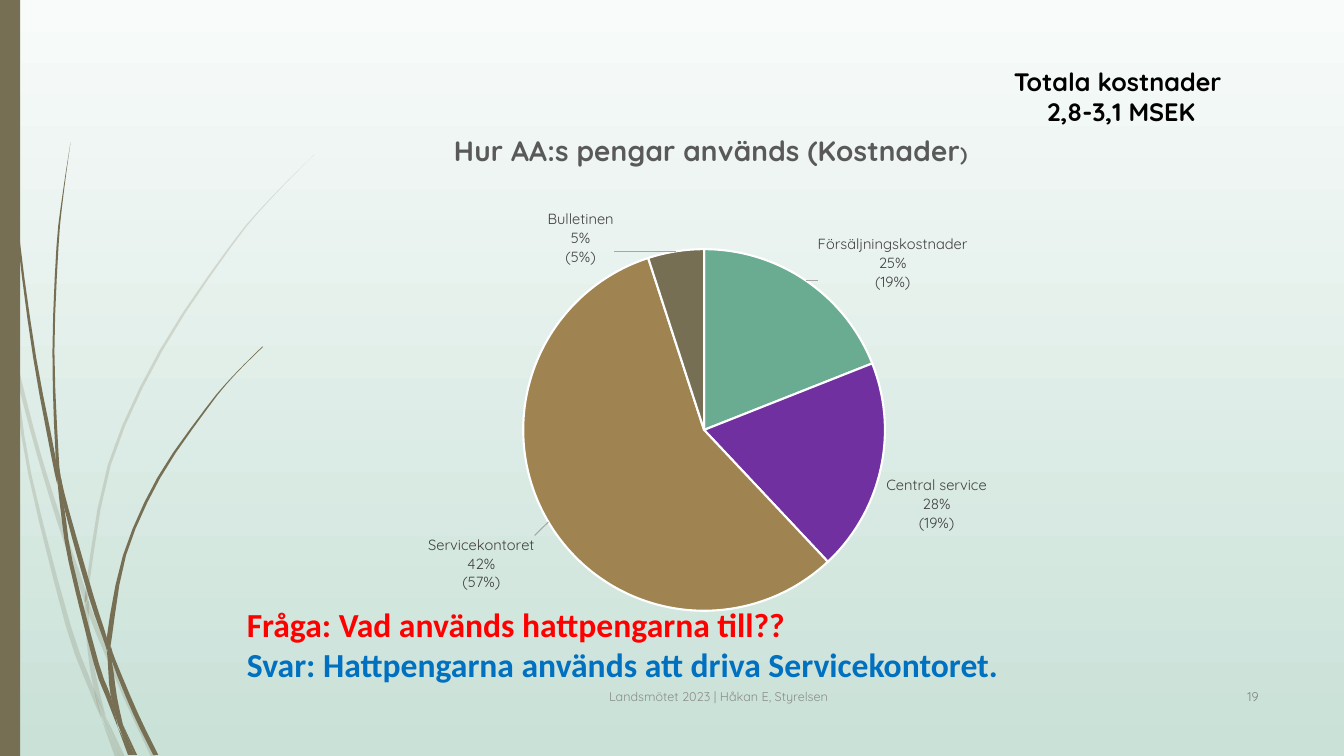
import pptx
import pptx.chart.data
import pptx.dml.color
import pptx.enum.chart
import pptx.enum.shapes
import pptx.enum.text
import pptx.oxml
import pptx.oxml.ns
import pptx.util
from pptx.util import Inches

RGBColor = pptx.dml.color.RGBColor
PP_ALIGN = pptx.enum.text.PP_ALIGN
MSO_ANCHOR = pptx.enum.text.MSO_ANCHOR

OLIVE = RGBColor(0x76, 0x6F, 0x54)
GREEN = RGBColor(0x6A, 0xAC, 0x91)
PURPLE = RGBColor(0x70, 0x30, 0xA0)
BROWN = RGBColor(0x9F, 0x83, 0x51)
WHITE = RGBColor(0xFF, 0xFF, 0xFF)
BLACK = RGBColor(0, 0, 0)
RED = RGBColor(0xFF, 0, 0)
BLUE = RGBColor(0, 0x70, 0xC0)
TITLE_GREY = RGBColor(0x59, 0x59, 0x59)
LABEL_GREY = RGBColor(0x40, 0x40, 0x40)
NUMBER_GREY = RGBColor(0x80, 0x80, 0x80)
FOOTER_GREY = RGBColor(0x8C, 0x8C, 0x8C)
SKY = RGBColor(0xF8, 0xFB, 0xFA)
MINT = RGBColor(0xC9, 0xE1, 0xD7)

# Each piece of grass: rows of (y, left x, right x), from top to bottom
PALE_GRASS = [
    [(2.82, 0, 0), (2.99, 0, 0.04), (3.22, 0.05, 0.09), (3.5, 0.11, 0.11)],
    [(3.45, 0.14, 0.14), (3.76, 0.17, 0.21), (4.49, 0.36, 0.4), (5.22, 0.58, 0.63),
     (5.86, 0.8, 0.85), (5.99, 0.84, 0.84)],
    [(5.96, 0.88, 0.88), (6.1, 0.88, 0.93), (6.93, 1.23, 1.27), (7.51, 1.5, 1.55)],
    [(7.11, 1.05, 1.05), (7.51, 1.19, 1.24)],
    [(3.5, 0.11, 0.11), (3.76, 0.14, 0.17), (4.7, 0.28, 0.31), (6.2, 0.65, 0.7),
     (6.83, 0.88, 0.93), (7.14, 1.01, 1.01)],
    [(5.99, 0.84, 0.84), (6.1, 0.84, 0.88), (6.46, 0.87, 0.91), (6.83, 0.93, 0.98),
     (7.11, 1.05, 1.05)],
    [(1.53, 3.12, 3.12), (1.97, 2.68, 2.69), (2.44, 2.28, 2.3), (3.48, 1.58, 1.61),
     (4.61, 1.07, 1.1), (5.84, 0.85, 0.88), (5.96, 0.88, 0.88)],
    [(7.14, 1.01, 1.01), (7.51, 1.14, 1.19)],
    [(5.86, 0.85, 0.85), (5.97, 0.84, 0.88), (6.1, 0.88, 0.88)],
    [(6.83, 0.93, 0.93), (7.07, 0.99, 1.03), (7.51, 1.19, 1.19)],
]
SOLID_GRASS = [
    [(0, 0.03, 0.04), (1.1, 0.07, 0.08), (2.33, 0.17, 0.19), (3.55, 0.33, 0.36),
     (4.53, 0.51, 0.55), (4.81, 0.57, 0.57)],
    [(4.72, 0.6, 0.6), (5.05, 0.64, 0.68), (5.92, 0.88, 0.93), (6.33, 1.02, 1.06),
     (6.45, 1.06, 1.06)],
    [(6.41, 1.1, 1.1), (6.56, 1.11, 1.15), (7.08, 1.32, 1.37), (7.49, 1.52, 1.57)],
    [(4.77, 0.57, 0.57), (5.05, 0.6, 0.64), (5.57, 0.68, 0.72), (6.58, 0.93, 0.98),
     (6.91, 1.05, 1.1), (7.22, 1.17, 1.17)],
    [(1.41, 0.7, 0.7), (1.93, 0.62, 0.63), (2.45, 0.56, 0.58), (3.49, 0.52, 0.54),
     (4.49, 0.55, 0.58), (4.72, 0.6, 0.6)],
    [(7.19, 1.22, 1.22), (7.49, 1.33, 1.36)],
    [(4.49, 0.55, 0.55), (4.77, 0.57, 0.61), (5.05, 0.64, 0.64)],
    [(3.44, 2.6, 2.61), (3.73, 2.31, 2.32), (4.05, 2.04, 2.06), (4.74, 1.56, 1.59),
     (5.51, 1.22, 1.25), (6.32, 1.06, 1.11), (6.41, 1.1, 1.1)],
    [(7.22, 1.17, 1.17), (7.49, 1.27, 1.31)],
    [(6.45, 1.06, 1.06), (6.56, 1.07, 1.11), (6.91, 1.1, 1.16), (7.19, 1.22, 1.22)],
    [(6.31, 1.06, 1.06), (6.43, 1.06, 1.1), (6.56, 1.11, 1.11)],
    [(6.91, 1.1, 1.1), (7.19, 1.17, 1.22), (7.49, 1.3, 1.33)],
]

# Category, value, colour, label lines, label shift as a share of the chart
COSTS = [
    ("Försäljningskostnader", -19, GREEN, "25%\n(19%)", 0.01, 0.03),
    ("Central service", -19, PURPLE, "28%\n(19%)", 0, 0.01),
    ("Servicekontoret", -57, BROWN, "42%\n(57%)", -0.01, 0.02),
    ("Bulletinen", -5, OLIVE, "5%\n(5%)", -0.07, 0.04),
]


def smooth_rows(rows, steps=3):
    """Return the rows with Catmull-Rom points added between them."""
    ends = [rows[0], *rows, rows[-1]]
    smooth = []
    for a, b, c, d in zip(ends, ends[1:], ends[2:], ends[3:]):
        for step in range(steps):
            t = step / steps
            smooth.append([
                q + t * (r - p) / 2 + t**2 * (2 * p - 5 * q + 4 * r - s) / 2
                + t**3 * (3 * q - p - 3 * r + s) / 2
                for p, q, r, s in zip(a, b, c, d)
            ])
    return smooth + [rows[-1]]


def add_text(box, paragraphs, font_name, size, bold, align, anchor):
    """Add a text box; paragraphs are pairs of text and colour."""
    frame = slide.shapes.add_textbox(*map(Inches, box)).text_frame
    frame.word_wrap = True
    frame.vertical_anchor = anchor
    frame.text = "\n".join(text for text, _ in paragraphs)
    for paragraph, (_, colour) in zip(frame.paragraphs, paragraphs):
        paragraph.alignment = align
        font = paragraph.runs[0].font
        font.name, font.size, font.bold = font_name, pptx.util.Pt(size), bold
        font.color.rgb = colour


prs = pptx.Presentation()
prs.slide_width, prs.slide_height = Inches(13.33), Inches(7.5)
slide = prs.slides.add_slide(prs.slide_layouts[6])

backdrop = slide.background.fill
backdrop.gradient()
backdrop.gradient_angle = 270
for stop, colour in zip(backdrop.gradient_stops, (SKY, MINT)):
    stop.color.rgb = colour

# Grass and side bar
for grass, opacity in ((PALE_GRASS, 20), (SOLID_GRASS, 100)):
    for rows in map(smooth_rows, grass):
        outline = [(x, y) for y, x, _ in rows] + [(x, y) for y, _, x in reversed(rows)]
        points = [(Inches(x), Inches(y)) for x, y in outline]
        builder = slide.shapes.build_freeform(*points[0])
        builder.add_line_segments(points[1:], close=True)
        blade = builder.convert_to_shape()
        blade.shadow.inherit = False
        blade.line.fill.background()
        blade.fill.solid()
        blade.fill.fore_color.rgb = OLIVE
        if opacity < 100:
            colour_xml = blade._element.spPr.find(".//" + pptx.oxml.ns.qn("a:srgbClr"))
            colour_xml.append(pptx.oxml.parse_xml(
                f'<a:alpha {pptx.oxml.ns.nsdecls("a")} val="{opacity * 1000}"/>'))

side_bar = slide.shapes.add_shape(
    pptx.enum.shapes.MSO_SHAPE.RECTANGLE, 0, 0, Inches(0.2), Inches(7.5))
side_bar.shadow.inherit = False
side_bar.fill.solid()
side_bar.fill.fore_color.rgb = OLIVE
side_bar.line.fill.background()

# Cost chart
cost_data = pptx.chart.data.CategoryChartData()
cost_data.categories = [cost[0] for cost in COSTS]
cost_data.add_series("Series 1", [cost[1] for cost in COSTS])
chart = slide.shapes.add_chart(
    pptx.enum.chart.XL_CHART_TYPE.PIE,
    Inches(2.74), Inches(1.12), Inches(8.66), Inches(5.2), cost_data).chart
chart.has_legend = False
chart.font.name, chart.font.size = "Quicksand", pptx.util.Pt(10)
chart.font.color.rgb = BLACK

heading = chart.chart_title.text_frame.paragraphs[0]
for text, size in (("Hur AA:s pengar används (Kostnader", 20), (")", 14)):
    run = heading.add_run()
    run.text = text
    run.font.name, run.font.size, run.font.bold = "Quicksand", pptx.util.Pt(size), True
    run.font.color.rgb = TITLE_GREY

pie = chart.plots[0]
pie.vary_by_categories = True
for index, (category, _, colour, shares, _, _) in enumerate(COSTS):
    piece = pie.series[0].points[index]
    piece.format.fill.solid()
    piece.format.fill.fore_color.rgb = colour
    piece.format.line.color.rgb = WHITE
    piece.format.line.width = pptx.util.Pt(1.5)
    label = piece.data_label
    label.text_frame.text = f"{category}\n{shares}"
    label.position = pptx.enum.chart.XL_LABEL_POSITION.OUTSIDE_END
    for paragraph in label.text_frame.paragraphs:
        font = paragraph.runs[0].font
        font.name, font.size, font.bold = "Quicksand", pptx.util.Pt(10.5), False
        font.color.rgb = LABEL_GREY

# Places within the chart: parent element, index of the layout, settings
places = [
    (chart.element.xpath(".//c:plotArea")[0], 0,
     dict(layoutTarget="inner", xMode="edge", yMode="edge", x=0.28, y=0.26, w=0.42, h=0.69)),
    (chart.element.xpath(".//c:title")[0], 1, dict(xMode="edge", yMode="edge", x=0.2, y=0.03)),
]
for label_xml, cost in zip(chart.element.xpath(".//c:dLbl"), COSTS):
    places.append((label_xml, 1, dict(x=cost[4], y=cost[5])))
for parent, position, settings in places:
    for old_layout in parent.findall(pptx.oxml.ns.qn("c:layout")):
        parent.remove(old_layout)
    marks = "".join(f'<c:{name} val="{value}"/>' for name, value in settings.items())
    parent.insert(position, pptx.oxml.parse_xml(
        f'<c:layout {pptx.oxml.ns.nsdecls("c")}><c:manualLayout>{marks}'
        "</c:manualLayout></c:layout>"))
chart.element.xpath(".//c:ser/c:dLbls")[0].append(pptx.oxml.parse_xml(
    f'<c:leaderLines {pptx.oxml.ns.nsdecls("c", "a")}><c:spPr><a:ln w="9525"><a:solidFill>'
    '<a:srgbClr val="A6A6A6"/></a:solidFill></a:ln></c:spPr></c:leaderLines>'))

# Texts
for box, text, colour, align in (
        ((11.73, 6.71, 0.85, 0.4), "19", NUMBER_GREY, PP_ALIGN.RIGHT),
        ((3.28, 6.71, 7.69, 0.4), "Landsmötet 2023 | Håkan E, Styrelsen", FOOTER_GREY,
         PP_ALIGN.CENTER)):
    add_text(box, [(text, colour)], "Quicksand", 9, False, align, MSO_ANCHOR.MIDDLE)
add_text((9.76, 0.61, 2.72, 0.71), [("Totala kostnader ", BLACK), ("2,8-3,1 MSEK", BLACK)],
         "Quicksand", 18, True, PP_ALIGN.CENTER, MSO_ANCHOR.TOP)
add_text((2.35, 5.94, 10.14, 0.91),
         [("Fråga: Vad används hattpengarna till??", RED),
          ("Svar: Hattpengarna används att driva Servicekontoret.", BLUE)],
         "Calibri", 24, True, PP_ALIGN.LEFT, MSO_ANCHOR.TOP)

prs.save("out.pptx")
